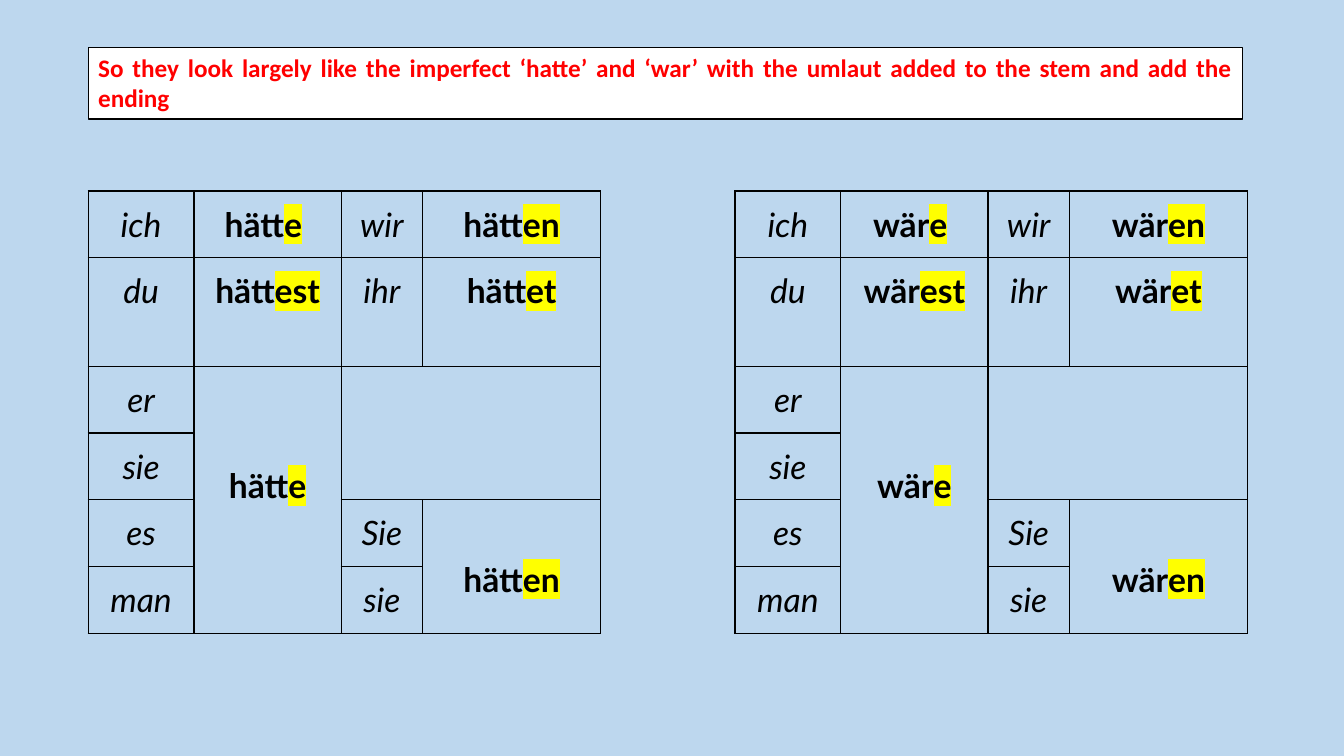
from dataclasses import dataclass
from pptx import Presentation
from pptx.dml.color import RGBColor
from pptx.enum.shapes import MSO_SHAPE
from pptx.enum.text import MSO_ANCHOR, PP_ALIGN
from pptx.oxml import parse_xml
from pptx.oxml.ns import nsdecls, qn
from pptx.util import Pt

RECT = MSO_SHAPE.RECTANGLE
TOP = MSO_ANCHOR.TOP
CENTER, JUSTIFY = PP_ALIGN.CENTER, PP_ALIGN.JUSTIFY


@dataclass(frozen=True)
class Theme:
    background: str = "BDD7EE"
    ink: str = "000000"
    note: str = "FF0000"
    paper: str = "FFFFFF"
    highlight: str = "FFFF00"
    table_font: str = "Lato"
    note_font: str = "Calibri"
    table_size: int = 24
    note_size: int = 18
    line: int = 1
    inset: int = 5


THEME = Theme()
NOTE = ("So they look largely like the imperfect ‘hatte’ and ‘war’ with the umlaut "
        "added to the stem and add the ending")
COLUMNS = (75.6, 105.1, 58.3, 127)
ROWS = (47.7, 77.5, 47.7, 47.7, 47.7, 47.7)
MERGES = (((2, 1), (5, 1)), ((2, 2), (3, 3)), ((4, 3), (5, 3)))
PRONOUNS = {
    0: ("ich", "du", "er", "sie", "es", "man"),
    2: ("wir", "ihr", None, None, "Sie", "sie"),
}
ENDINGS = (
    (0, 1, "e", 0, 6),
    (0, 3, "en", 0, 0),
    (1, 1, "est", 0, 0),
    (1, 3, "et", 0, 0),
    (2, 1, "e", 61.5, 0),
    (4, 3, "en", 33, 0),
)


def rgb(value):
    return RGBColor.from_string(value)


def add_run(p, text, font, size, color, bold=False, italic=False, highlight=None):
    r = p.add_run()
    r.text = text
    r.font.size = Pt(size)
    r.font.bold = bold
    r.font.italic = italic
    r.font.color.rgb = rgb(color)
    r.font.name = font
    if highlight:
        mark = parse_xml(f'<a:highlight {nsdecls("a")}><a:srgbClr val="{highlight}"/></a:highlight>')
        r.font._element.find(qn("a:latin")).addprevious(mark)


def add_note(s, left, top, width, height):
    sp = s.shapes.add_shape(RECT, Pt(left), Pt(top), Pt(width), Pt(height))
    sp.shadow.inherit = False
    sp.fill.solid()
    sp.fill.fore_color.rgb = rgb(THEME.paper)
    sp.line.color.rgb = rgb(THEME.ink)
    sp.line.width = Pt(THEME.line)
    tf = sp.text_frame
    tf.word_wrap = True
    tf.vertical_anchor = TOP
    p = tf.paragraphs[0]
    p.alignment = JUSTIFY
    add_run(p, NOTE, THEME.note_font, THEME.note_size, THEME.note, bold=True)


def style_cell(cell):
    cell.fill.background()
    cell.margin_left = cell.margin_right = Pt(THEME.inset)
    cell.margin_top = cell.margin_bottom = Pt(THEME.inset)
    tcPr = cell._tc.get_or_add_tcPr()
    for i, side in enumerate(("lnL", "lnR", "lnT", "lnB")):
        tcPr.insert(i, parse_xml(
            f'<a:{side} {nsdecls("a")} w="{Pt(THEME.line)}"><a:solidFill>'
            f'<a:srgbClr val="{THEME.ink}"/></a:solidFill></a:{side}>'))


def write_cell(cell, text, ending=None):
    p = cell.text_frame.paragraphs[0]
    p.alignment = CENTER
    p.line_spacing = 1.15
    look = (THEME.table_font, THEME.table_size, THEME.ink)
    add_run(p, text, *look, bold=bool(ending), italic=not ending)
    if ending:
        add_run(p, ending, *look, bold=True, highlight=THEME.highlight)


def add_conjugation(s, left, top, stem):
    table = s.shapes.add_table(len(ROWS), len(COLUMNS), Pt(left), Pt(top),
                               Pt(sum(COLUMNS)), Pt(sum(ROWS))).table
    table.first_row = table.horz_banding = False
    for column, width in zip(table.columns, COLUMNS):
        column.width = Pt(width)
    for row, height in zip(table.rows, ROWS):
        row.height = Pt(height)
    for cell in table.iter_cells():
        style_cell(cell)
    for first, last in MERGES:
        table.cell(*first).merge(table.cell(*last))
    for col, pronouns in PRONOUNS.items():
        for row, pronoun in enumerate(pronouns):
            if pronoun:
                write_cell(table.cell(row, col), pronoun)
    for row, col, ending, drop, shift in ENDINGS:
        cell = table.cell(row, col)
        cell.margin_top = Pt(THEME.inset + drop)
        cell.margin_right = Pt(THEME.inset + shift)
        write_cell(cell, stem, ending)


def main():
    prs = Presentation()
    prs.slide_width, prs.slide_height = Pt(960), Pt(540)
    s = prs.slides.add_slide(prs.slide_layouts[6])
    s.background.fill.solid()
    s.background.fill.fore_color.rgb = rgb(THEME.background)
    add_conjugation(s, 63, 136.5, "hätt")
    add_conjugation(s, 525, 136.5, "wär")
    add_note(s, 63, 34, 824.5, 51)
    prs.save("out.pptx")


if __name__ == "__main__":
    main()
